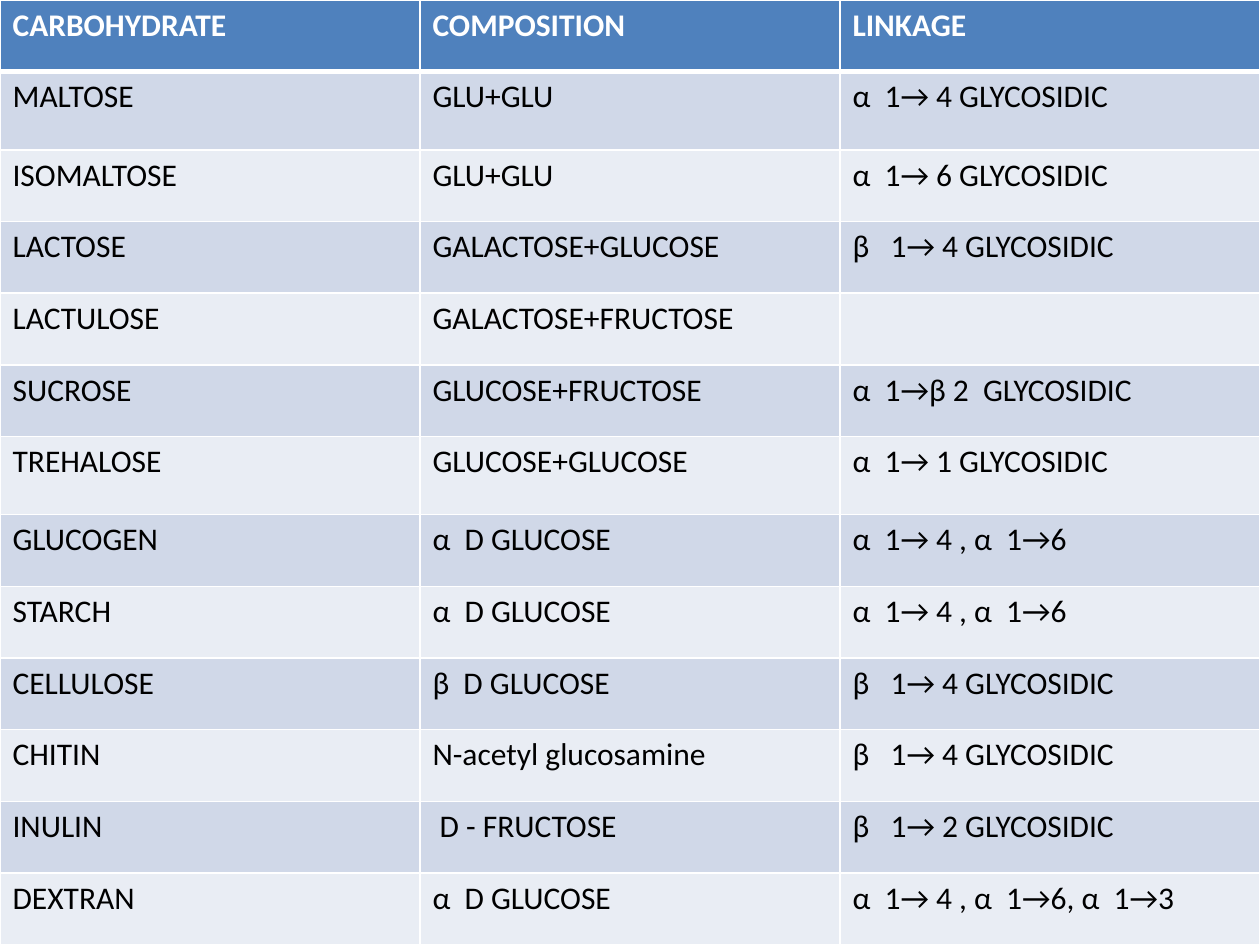
from lxml import etree
from pptx import Presentation
from pptx.dml.color import RGBColor
from pptx.oxml.ns import qn
from pptx.util import Inches, Pt

BLANK_LAYOUT = 6
FONT = "Calibri"
COLORS = {
    "header": "4F81BD",
    "odd_row": "D0D8E8",
    "even_row": "E9EDF4",
    "header_text": "FFFFFF",
    "body_text": "000000",
    "border": "FFFFFF",
}
WIDTH, HEIGHT = 10, 7.5
TALL_ROWS = (1, 6)
TALL_HEIGHT = 0.62
CARBOHYDRATES = [
    ("CARBOHYDRATE", "COMPOSITION", "LINKAGE"),
    ("MALTOSE", "GLU+GLU", "α  1→ 4 GLYCOSIDIC"),
    ("ISOMALTOSE", "GLU+GLU", "α  1→ 6 GLYCOSIDIC"),
    ("LACTOSE", "GALACTOSE+GLUCOSE", "β   1→ 4 GLYCOSIDIC"),
    ("LACTULOSE", "GALACTOSE+FRUCTOSE", ""),
    ("SUCROSE", "GLUCOSE+FRUCTOSE", "α  1→β 2  GLYCOSIDIC"),
    ("TREHALOSE", "GLUCOSE+GLUCOSE", "α  1→ 1 GLYCOSIDIC"),
    ("GLUCOGEN", "α  D GLUCOSE", "α  1→ 4 , α  1→6"),
    ("STARCH", "α  D GLUCOSE", "α  1→ 4 , α  1→6"),
    ("CELLULOSE", "β  D GLUCOSE", "β   1→ 4 GLYCOSIDIC"),
    ("CHITIN", "N-acetyl glucosamine", "β   1→ 4 GLYCOSIDIC"),
    ("INULIN", " D - FRUCTOSE", "β   1→ 2 GLYCOSIDIC"),
    ("DEXTRAN", "α  D GLUCOSE", "α  1→ 4 , α  1→6, α  1→3"),
]


def set_borders(cell, top, bottom):
    properties = cell._tc.get_or_add_tcPr()
    for side, points in (("L", 1), ("R", 1), ("T", top), ("B", bottom)):
        border = etree.SubElement(properties, qn(f"a:ln{side}"), w=str(Pt(points)))
        fill = etree.SubElement(border, qn("a:solidFill"))
        etree.SubElement(fill, qn("a:srgbClr"), val=COLORS["border"])


def format_cell(cell, text, fill, text_color, bold):
    cell.fill.solid()
    cell.fill.fore_color.rgb = RGBColor.from_string(COLORS[fill])
    cell.text_frame.text = text
    font = cell.text_frame.paragraphs[0].font
    for run in cell.text_frame.paragraphs[0].runs:
        font = run.font
    font.name = FONT
    font.size = Pt(18)
    font.bold = bold
    font.color.rgb = RGBColor.from_string(COLORS[text_color])


def add_carbohydrate_table(slide):
    row_count, column_count = len(CARBOHYDRATES), len(CARBOHYDRATES[0])
    table = slide.shapes.add_table(
        row_count, column_count, 0, 0, Inches(WIDTH), Inches(HEIGHT)
    ).table
    regular_height = (HEIGHT - TALL_HEIGHT * len(TALL_ROWS)) / (row_count - len(TALL_ROWS))
    for index, entries in enumerate(CARBOHYDRATES):
        height = TALL_HEIGHT if index in TALL_ROWS else regular_height
        table.rows[index].height = Inches(height)
        is_header = index == 0
        band = "header" if is_header else "odd_row" if index % 2 else "even_row"
        text_color = "header_text" if is_header else "body_text"
        for column, text in enumerate(entries):
            cell = table.cell(index, column)
            set_borders(cell, 3 if index == 1 else 1, 3 if is_header else 1)
            format_cell(cell, text, band, text_color, is_header)


def main():
    presentation = Presentation()
    presentation.slide_width = Inches(WIDTH)
    presentation.slide_height = Inches(HEIGHT)
    slide = presentation.slides.add_slide(presentation.slide_layouts[BLANK_LAYOUT])
    add_carbohydrate_table(slide)
    presentation.save("out.pptx")


if __name__ == "__main__":
    main()
